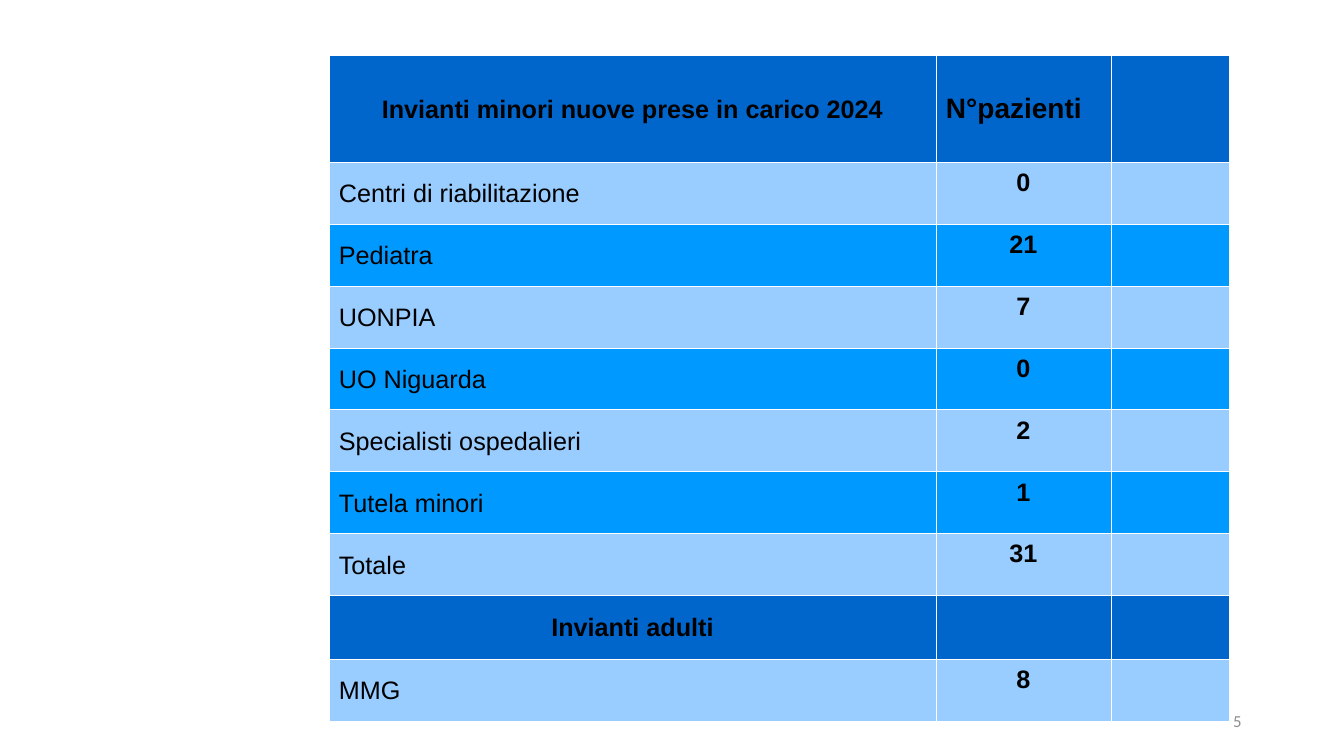
from lxml import etree
from pptx import Presentation, util as u
from pptx.dml.color import RGBColor
from pptx.enum import text
from pptx.oxml import ns

HEADER, LIGHT, BRIGHT = "0066CC", "99CCFF", "0099FF"
CENTER, LEFT, RIGHT = text.PP_ALIGN.CENTER, text.PP_ALIGN.LEFT, text.PP_ALIGN.RIGHT
MIDDLE, TOP = text.MSO_ANCHOR.MIDDLE, text.MSO_ANCHOR.TOP


def color(value):
    return RGBColor.from_string(value)


def apply(target, formats):
    for name, value in formats.items():
        setattr(target, name, value)


class Page:
    """Style and current slide."""
    font = "Arial"
    ink = "000000"
    border = "FFFFFF"
    border_width = u.Pt(0.11)

    def __init__(self, deck):
        self.slide = deck.slides.add_slide(deck.slide_layouts[6])

    def add_words(self, para, words, align, ink=None, **formats):
        para.alignment = align
        span = para.add_run()
        span.text = words
        apply(span.font, {"name": self.font, **formats})
        span.font.color.rgb = color(ink or self.ink)

    def table(self, left, top, widths, heights):
        frame = self.slide.shapes.add_table(
            len(heights), len(widths), u.Cm(left), u.Cm(top),
            u.Cm(sum(widths)), u.Cm(sum(heights)))
        grid = frame.table
        apply(grid, {"first_row": False, "horz_banding": False})
        for column, width in zip(grid.columns, widths):
            column.width = u.Cm(width)
        for row, height in zip(grid.rows, heights):
            row.height = u.Cm(height)
        return grid

    def cell(self, cell, fill, words="", align=LEFT, anchor=MIDDLE, **formats):
        properties = cell._tc.get_or_add_tcPr()
        for side in ("lnL", "lnR", "lnT", "lnB"):
            line = etree.SubElement(properties, ns.qn(f"a:{side}"), w=str(int(self.border_width)))
            solid = etree.SubElement(line, ns.qn("a:solidFill"))
            etree.SubElement(solid, ns.qn("a:srgbClr"), val=self.border)
        cell.fill.solid()
        cell.fill.fore_color.rgb = color(fill)
        apply(cell, {"vertical_anchor": anchor, "margin_left": u.Cm(0.25),
                     "margin_right": u.Cm(0.25), "margin_top": u.Cm(0.25),
                     "margin_bottom": u.Cm(0.13)})
        if words:
            para = cell.text_frame.paragraphs[0]
            para.line_spacing = 0.87
            self.add_words(para, words, align, **{"size": u.Pt(18), **formats})

    def label(self, words, left, top, width, height, align, **formats):
        box = self.slide.shapes.add_textbox(*map(u.Cm, (left, top, width, height)))
        apply(box.text_frame, {"word_wrap": True, "vertical_anchor": MIDDLE})
        self.add_words(box.text_frame.paragraphs[0], words, align, **formats)


def main():
    deck = Presentation()
    apply(deck, {"slide_width": u.Cm(33.87), "slide_height": u.Cm(19.05)})
    page = Page(deck)

    # Referral table: heading rows have no patient count
    minors = "Invianti minori nuove prese in carico 2024"
    rows = [
        (minors, None),
        ("Centri di riabilitazione", 0),
        ("Pediatra", 21),
        ("UONPIA", 7),
        ("UO Niguarda", 0),
        ("Specialisti ospedalieri", 2),
        ("Tutela minori", 1),
        ("Totale", 31),
        ("Invianti adulti", None),
        ("MMG", 8),
    ]
    heights = [2.7] + [1.56] * 7 + [1.6, 1.56]
    grid = page.table(8.29, 1.38, [15.3, 4.4, 2.98], heights)
    for index, (sender, patients) in enumerate(rows):
        heading = patients is None
        fill = HEADER if heading else LIGHT if index % 2 else BRIGHT
        page.cell(grid.cell(index, 0), fill, sender,
                  CENTER if heading else LEFT, bold=heading)
        if sender == minors:
            page.cell(grid.cell(index, 1), fill, "N°pazienti", bold=True, size=u.Pt(20))
        else:
            page.cell(grid.cell(index, 1), fill, "" if heading else str(patients),
                      CENTER, TOP, bold=True)
        page.cell(grid.cell(index, 2), fill)

    # Page number
    page.label("5", 23.92, 17.65, 7.62, 1.01, RIGHT,
               name="Calibri", size=u.Pt(12), ink="8C8C8C")

    deck.save("out.pptx")


if __name__ == "__main__":
    main()
